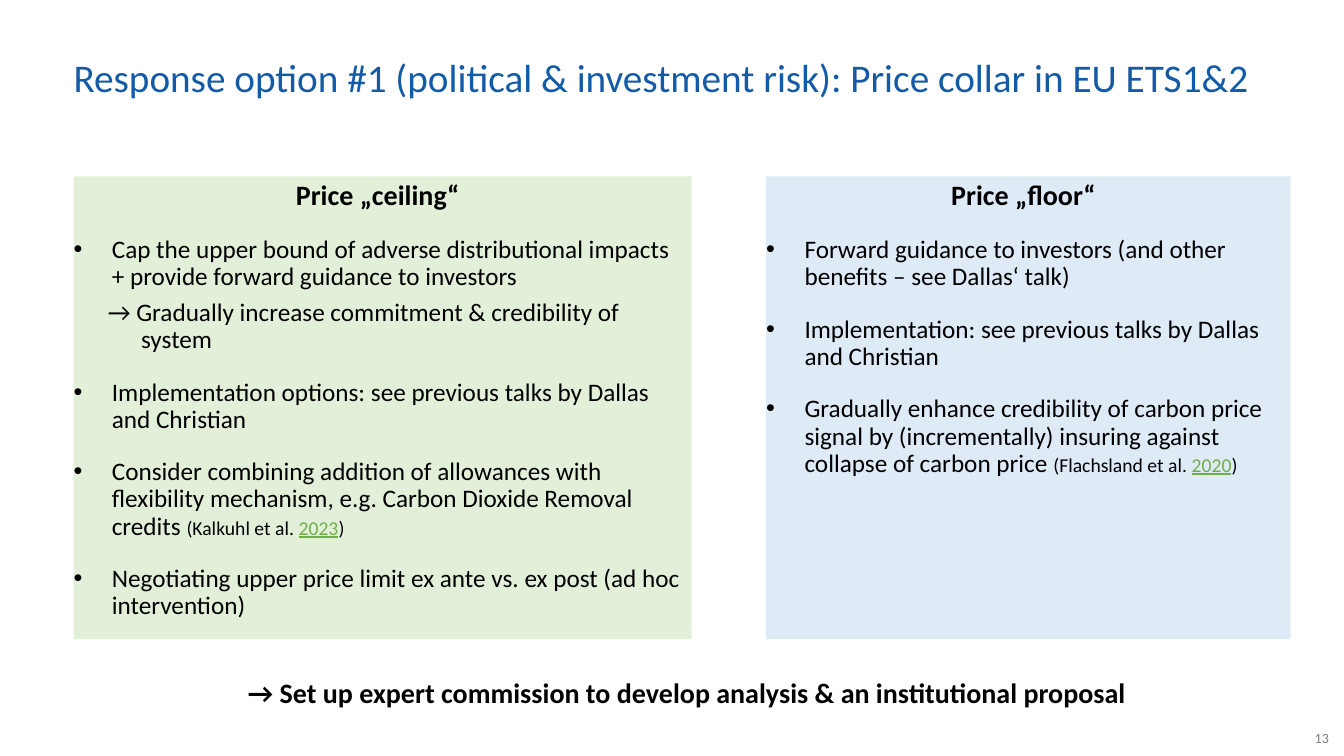
"""Build the slide on a price collar in EU ETS1&2."""
from dataclasses import dataclass

from lxml import etree
from pptx import Presentation
from pptx.dml.color import RGBColor
from pptx.enum.shapes import MSO_SHAPE
from pptx.enum.text import MSO_ANCHOR, MSO_AUTO_SIZE, PP_ALIGN
from pptx.oxml.ns import qn
from pptx.util import Inches, Pt


@dataclass(frozen=True)
class Theme:
    font: str = "Calibri"
    title: str = "135BA6"
    text: str = "000000"
    link: str = "70AD47"
    number: str = "808080"
    ceiling: str = "E2F0D9"
    floor: str = "DEEBF7"
    title_size: int = 28
    head_size: int = 20
    body_size: int = 18
    cite_size: int = 14
    number_size: int = 10


T = Theme()


def setup(tf, anchor=MSO_ANCHOR.TOP, right=0.1, edge=0.05):
    """Set the wrapping, anchor and margins of a text frame."""
    tf.word_wrap = True
    tf.auto_size = MSO_AUTO_SIZE.NONE
    tf.vertical_anchor = anchor
    tf.margin_left, tf.margin_right = Inches(0), Inches(right)
    tf.margin_top = tf.margin_bottom = Inches(edge)


def write(tf, *runs, size=T.body_size, color=T.text, bold=False, align=PP_ALIGN.LEFT,
          before=0, left=0, hang=0, bullet=False, spacing=0.9):
    """Add a paragraph of runs, each a text or a (text, size, color, underline) tuple."""
    p = tf.paragraphs[0]
    if p.runs:
        p = tf.add_paragraph()
    p.alignment, p.line_spacing, p.space_before = align, spacing, Pt(before)
    pPr = p._p.get_or_add_pPr()
    pPr.set("marL", str(Inches(left)))
    pPr.set("indent", str(-Inches(hang)))
    if bullet:
        etree.SubElement(pPr, qn("a:buFont")).set("typeface", "Arial")
        etree.SubElement(pPr, qn("a:buChar")).set("char", "•")
    for run in runs:
        text, pt, rgb, underline = (run, size, color, False) if isinstance(run, str) else run
        r = p.add_run()
        r.text = text
        r.font.name, r.font.size, r.font.bold = T.font, Pt(pt), bold
        r.font.color.rgb = RGBColor.from_string(rgb)
        r.font.underline = underline


prs = Presentation()
prs.slide_width, prs.slide_height = Inches(13.33), Inches(7.5)
s = prs.slides.add_slide(prs.slide_layouts[5])

title = s.shapes.title
title.left, title.top, title.width, title.height = map(Inches, (0.73, 0.47, 11.94, 0.65))
setup(title.text_frame, MSO_ANCHOR.MIDDLE, right=0)
write(title.text_frame,
      "Response option #1 (political & investment risk): Price collar in EU ETS1&2",
      size=T.title_size, color=T.title, align=PP_ALIGN.JUSTIFY)

BULLET = dict(before=18, left=0.38, hang=0.38, bullet=True)
ARROW = dict(before=6, left=0.67, hang=0.33)
panels = [
    (0.73, 6.13, T.ceiling, "Price „ceiling“", [
        (BULLET, ["Cap the upper bound of adverse distributional impacts "
                  "+ provide forward guidance to investors"]),
        (ARROW, ["→ Gradually increase commitment & credibility of system"]),
        (BULLET, ["Implementation options: see previous talks by Dallas and Christian"]),
        (BULLET, ["Consider combining addition of allowances with flexibility mechanism, "
                  "e.g. Carbon Dioxide Removal credits ",
                  ("(Kalkuhl et al. ", T.cite_size, T.text, False),
                  ("2023", T.cite_size, T.link, True),
                  (")", T.cite_size, T.text, False)]),
        (BULLET, ["Negotiating upper price limit ex ante vs. ex post (ad hoc intervention)"]),
    ]),
    (7.6, 5.2, T.floor, "Price „floor“", [
        (BULLET, ["Forward guidance to investors (and other benefits – see Dallas‘ talk)"]),
        (BULLET, ["Implementation: see previous talks by Dallas and Christian"]),
        (BULLET, ["Gradually enhance credibility of carbon price signal by (incrementally) "
                  "insuring against collapse of carbon price ",
                  ("(Flachsland et al. ", T.cite_size, T.text, False),
                  ("2020", T.cite_size, T.link, True),
                  (")", T.cite_size, T.text, False)]),
    ]),
]
for left, width, fill, heading, points in panels:
    sp = s.shapes.add_shape(MSO_SHAPE.RECTANGLE, Inches(left), Inches(1.75),
                            Inches(width), Inches(4.59))
    sp.shadow.inherit = False
    sp.fill.solid()
    sp.fill.fore_color.rgb = RGBColor.from_string(fill)
    sp.line.fill.background()
    setup(sp.text_frame)
    write(sp.text_frame, heading, size=T.head_size, bold=True, align=PP_ALIGN.CENTER)
    for style, runs in points:
        write(sp.text_frame, *runs, **style)

conclusion = s.shapes.add_textbox(Inches(2.46), Inches(6.69), Inches(9.73), Inches(0.54))
setup(conclusion.text_frame)
write(conclusion.text_frame,
      "→ Set up expert commission to develop analysis & an institutional proposal",
      size=T.head_size, bold=True)

number = s.shapes.add_textbox(Inches(12.53), Inches(7.23), Inches(0.65), Inches(0.17))
setup(number.text_frame, MSO_ANCHOR.BOTTOM, right=0, edge=0)
write(number.text_frame, "13", size=T.number_size, color=T.number,
      align=PP_ALIGN.RIGHT, spacing=1.0)

prs.save("out.pptx")
